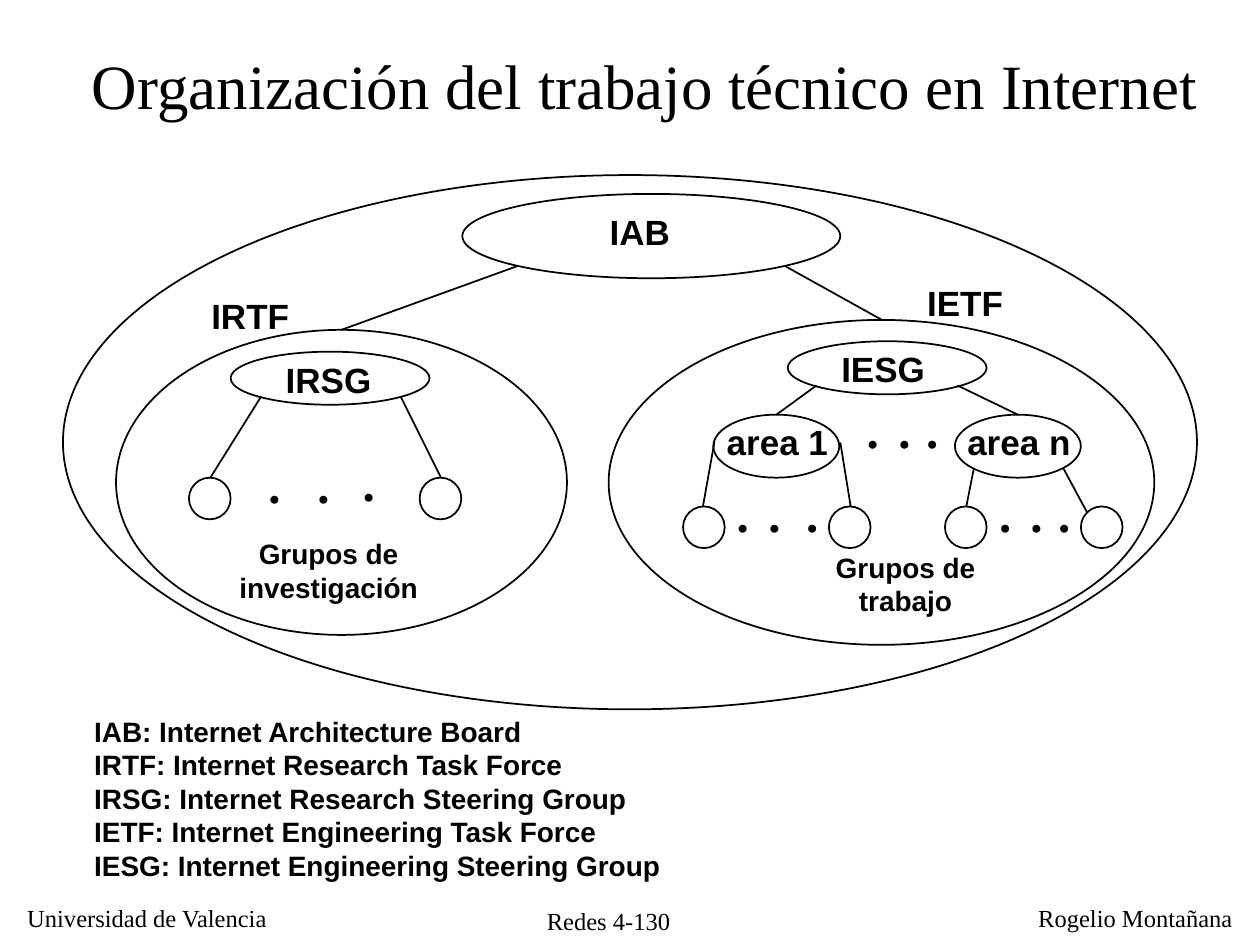
from lxml import etree
from pptx import Presentation
from pptx.dml.color import RGBColor
from pptx.enum.shapes import MSO_CONNECTOR, MSO_SHAPE
from pptx.enum.text import MSO_ANCHOR, MSO_AUTO_SIZE, PP_ALIGN
from pptx.oxml.ns import qn
from pptx.util import Cm, Pt

OVAL = MSO_SHAPE.OVAL
LINE = MSO_CONNECTOR.STRAIGHT
LEFT, MID = PP_ALIGN.LEFT, PP_ALIGN.CENTER
CENTER = MSO_ANCHOR.MIDDLE
GROW = MSO_AUTO_SIZE.SHAPE_TO_FIT_TEXT
BLACK = "000000"
SANS, SERIF = "Arial", "Times New Roman"

# left, top, width, height in cm
BODIES = [
    (1.27, 3.53, 22.86, 10.77),
    (9.32, 3.91, 7.62, 1.7),
    (2.34, 6.65, 9.09, 6.15),
    (12.27, 6.45, 11, 6.55),
    (4.65, 7.09, 4.01, 1.07),
    (15.88, 6.88, 4.01, 1.07),
    (14.38, 8.36, 2.54, 1.27),
    (19.25, 8.36, 2.54, 1.27),
]
GROUP = 0.84
# top, then the left edges along that row
GROUPS = [(9.63, (3.81, 8.46)), (10.21, (13.77, 16.71, 19.05, 21.79))]
DOTS = [
    (9.04, (5.16, 6.15)),
    (8.99, (7.06,)),
    (7.92, (17.22, 17.86, 18.42)),
    (9.63, (14.6, 15.24, 16, 19.89, 20.52, 21.08)),
]
# x and y of the upper end, x and y of the lower end
LINKS = [
    (10.44, 5.36, 6.88, 6.65),
    (15.82, 5.36, 17.78, 6.45),
    (5.26, 8, 4.24, 9.63),
    (8.08, 8, 8.89, 9.63),
    (16.46, 7.77, 15.65, 8.36),
    (19.3, 7.77, 20.52, 8.36),
    (14.4, 8.92, 14.17, 10.21),
    (16.94, 8.92, 17.15, 10.21),
    (19.63, 9.45, 19.48, 10.21),
    (21.44, 9.45, 21.92, 10.34),
]
# text, left, top, width
NAMES = [
    ("IAB", 12.04, 4.11, 1.8),
    ("IRTF", 4.01, 5.82, 2.15),
    ("IETF", 18.44, 5.56, 2.1),
    ("IRSG", 5.51, 7.11, 2.3),
    ("IESG", 16.71, 6.88, 2.25),
    ("area 1", 14.4, 8.36, 2.62),
    ("area n", 19.25, 8.36, 2.66),
]
LEGEND = [
    "IAB: Internet Architecture Board",
    "IRTF: Internet Research Task Force",
    "IRSG: Internet Research Steering Group",
    "IETF: Internet Engineering Task Force",
    "IESG: Internet Engineering Steering Group",
]


def color(code):
    return RGBColor.from_string(code)


def place(shape, box):
    shape.left, shape.top, shape.width, shape.height = map(Cm, box)


def write(frame, text, size, font, bold=False, align=LEFT):
    frame.text = text
    for para in frame.paragraphs:
        para.alignment = align
        for run in para.runs:
            run.font.size = Pt(size)
            run.font.name = font
            run.font.bold = bold
            run.font.color.rgb = color(BLACK)


def add_text(slide, box, text, size, font=SANS, bold=True, align=LEFT):
    frame = slide.shapes.add_textbox(*map(Cm, box)).text_frame
    frame.word_wrap = False
    frame.auto_size = GROW
    write(frame, text, size, font, bold, align)


def stroke(line):
    line.color.rgb = color(BLACK)
    line.width = Pt(1)


def add_oval(slide, box):
    oval = slide.shapes.add_shape(OVAL, *map(Cm, box))
    oval.shadow.inherit = False
    oval.fill.background()
    stroke(oval.line)


def add_link(slide, ends):
    link = slide.shapes.add_connector(LINE, *map(Cm, ends))
    stroke(link.line)
    etree.SubElement(link._element.spPr, qn("a:effectLst"))


def add_title(slide, text):
    title = slide.shapes.title
    place(title, (1.47, 0.53, 23.06, 2.34))
    title.text_frame.vertical_anchor = CENTER
    write(title.text_frame, text, 36, SERIF, align=MID)


def add_footer(slide):
    for text, box, align in [
        ("Redes 4-130", (10.62, 18.14, 3.3, 0.76), MID),
        ("Universidad de Valencia", (0.3, 18.08, 5.41, 0.84), LEFT),
        ("Rogelio Montañana", (20.68, 18.08, 4.42, 0.84), LEFT),
    ]:
        add_text(slide, box, text, 14, SERIF, False, align)


def add_chart_parts(slide):
    """Draw the ovals of the organisation and the lines between them."""
    for box in BODIES:
        add_oval(slide, box)
    for top, lefts in GROUPS:
        for left in lefts:
            add_oval(slide, (left, top, GROUP, GROUP))
    for ends in LINKS:
        add_link(slide, ends)


def add_labels(slide):
    for top, lefts in DOTS:
        for left in lefts:
            add_text(slide, (left, top, 0.76, 1.45), ".", 28, SERIF)
    for text, left, top, width in NAMES:
        add_text(slide, (left, top, width, 1.09), text, 20)
    for text, box in [
        ("Grupos de\ninvestigación", (4.57, 10.69, 4.11, 1.63)),
        ("Grupos de\ntrabajo", (16.59, 10.97, 3.33, 1.63)),
    ]:
        add_text(slide, box, text, 16, align=MID)
    add_text(slide, (1.65, 14.27, 11.96, 3.66), "\n".join(LEGEND), 16)


def main():
    deck = Presentation()
    deck.slide_width, deck.slide_height = Cm(25.4), Cm(19.05)
    slide = deck.slides.add_slide(deck.slide_layouts[5])
    add_title(slide, "Organización del trabajo técnico en Internet")
    add_chart_parts(slide)
    add_labels(slide)
    add_footer(slide)
    deck.save("out.pptx")


if __name__ == "__main__":
    main()
